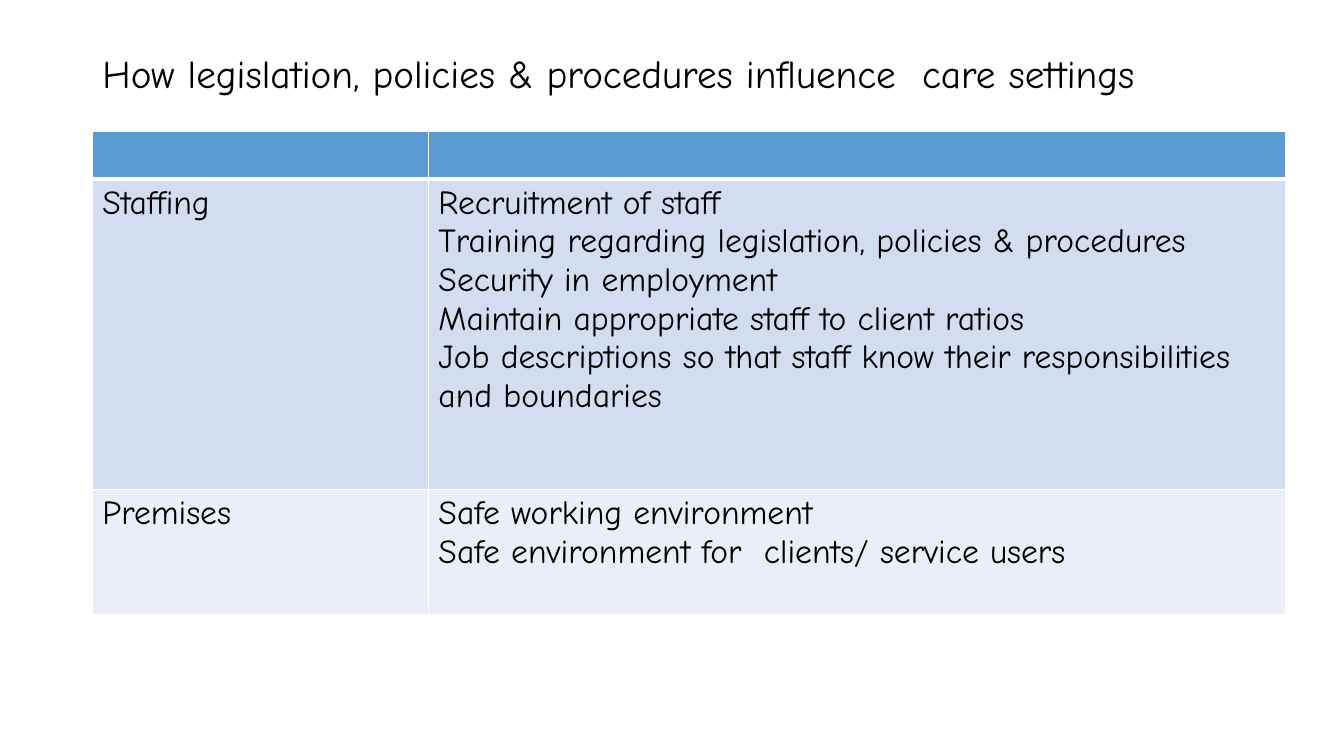
from lxml.etree import fromstring
from pptx import Presentation
from pptx.dml.color import RGBColor
from pptx.enum.text import MSO_ANCHOR, PP_ALIGN
from pptx.oxml.ns import nsdecls
from pptx.util import Inches, Pt

BLACK = RGBColor(0x00, 0x00, 0x00)
WHITE = RGBColor(0xFF, 0xFF, 0xFF)
BLUE = RGBColor(0x5B, 0x9B, 0xD5)
PALE = RGBColor(0xD2, 0xDE, 0xEF)
LIGHT = RGBColor(0xEA, 0xEF, 0xF7)

TITLE = "How legislation, policies & procedures influence  care settings"
ROWS = [
    ("", ""),
    ("Staffing", "\n".join([
        "Recruitment of staff",
        "Training regarding legislation, policies & procedures",
        "Security in employment",
        "Maintain appropriate staff to client ratios",
        "Job descriptions so that staff know their responsibilities and boundaries",
    ])),
    ("Premises", "Safe working environment\nSafe environment for  clients/ service users"),
]
FILLS = [BLUE, PALE, LIGHT]


class Deck:
    font = "Comic Neue"
    cols, rows = 160, 90

    def __init__(self):
        self.show = Presentation()
        self.show.slide_width = Inches(13.33)
        self.show.slide_height = Inches(7.5)
        self.slide = self.show.slides.add_slide(self.show.slide_layouts[5])

    def wide(self, count):
        return round(self.show.slide_width * count / self.cols)

    def high(self, count):
        return round(self.show.slide_height * count / self.rows)

    def box(self, left, top, width, height):
        return self.wide(left), self.high(top), self.wide(width), self.high(height)

    def style(self, frame, size):
        for para in frame.paragraphs:
            para.alignment = PP_ALIGN.LEFT
            for run in para.runs:
                run.font.name = self.font
                run.font.size = Pt(size)
                run.font.bold = False
                run.font.color.rgb = BLACK

    def title(self, text, *place):
        shape = self.slide.shapes.title
        shape.left, shape.top, shape.width, shape.height = self.box(*place)
        frame = shape.text_frame
        frame.text = text
        frame.word_wrap = True
        frame.vertical_anchor = MSO_ANCHOR.MIDDLE
        frame.paragraphs[0].line_spacing = 0.9
        self.style(frame, 28)

    def edge(self, cell, base):
        props = cell._tc.get_or_add_tcPr()
        for spot, side in enumerate("LRTB"):
            width = Pt(base if side == "B" else 1)
            props.insert(spot, fromstring(
                f'<a:ln{side} {nsdecls("a")} w="{width}"><a:solidFill>'
                f'<a:srgbClr val="{WHITE}"/></a:solidFill></a:ln{side}>'))

    def table(self, data, fills, left, top, widths, heights):
        place = self.box(left, top, sum(widths), sum(heights))
        grid = self.slide.shapes.add_table(len(data), len(widths), *place).table
        for col, width in zip(grid.columns, widths):
            col.width = self.wide(width)
        for index, (row, height) in enumerate(zip(grid.rows, heights)):
            row.height = self.high(height)
            for cell, text in zip(row.cells, data[index]):
                cell.fill.solid()
                cell.fill.fore_color.rgb = fills[index]
                self.edge(cell, 1 if index else 3)
                if text:
                    cell.text_frame.text = text
                    self.style(cell.text_frame, 24)


def main():
    deck = Deck()
    deck.title(TITLE, 11, 4.8, 138, 8.4)
    deck.table(ROWS, FILLS, 11, 15.6, [40, 102.1], [5.7, 37, 14.9])
    deck.show.save("out.pptx")


if __name__ == "__main__":
    main()
